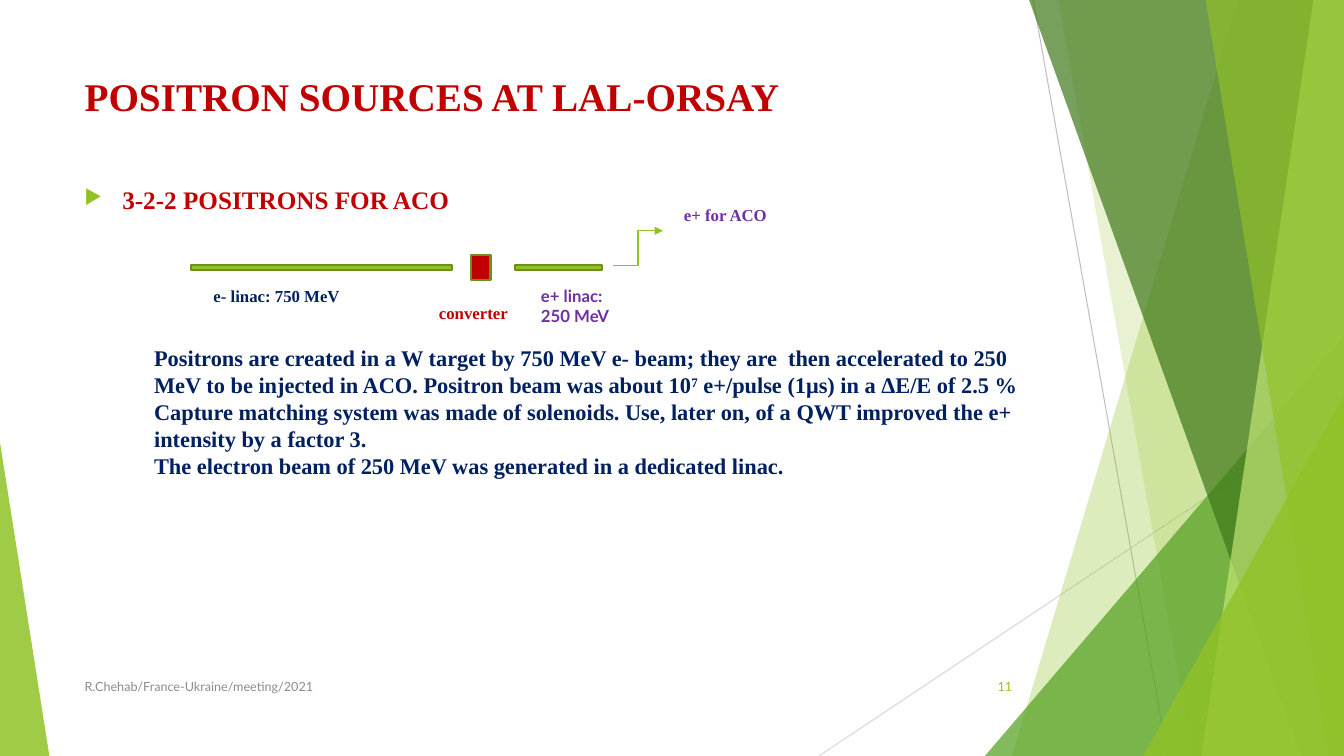
from lxml import etree
from pptx import Presentation, util as u
from pptx.dml.color import RGBColor
from pptx.enum import shapes, text
from pptx.oxml.ns import qn

WIDTH, HEIGHT = 960, 540
SERIF, SANS = "Times New Roman", "Lato"
GREEN, DARK_GREEN = "90C226", "6B901C"
RED, NAVY, PURPLE, GREY = "C00000", "002060", "7030A0", "8C8C8C"
LEFT_MARGIN = 53.3

# Thin lines: x1, y1, x2, y2, colour
THIN_LINES = [(738, 0, 834, HEIGHT, "BFBFBF"), (WIDTH, 290, 584.9, HEIGHT, "D9D9D9")]
# Bands run to the right edge: top x, bottom x, colour, opacity %
# Triangles stand on the bottom edge: left, top, width, apex position, colour, opacity %
FACETS = [
    ("band", 884.2, 722.9, GREEN, 30),
    ("band", 756, 851.8, GREEN, 20),
    ("triangle", 703.5, 240, 256.5, 1, "54A021", 72),
    ("band", 735.1, 929.5, "3F7819", 70),
    ("band", 938.2, 858.2, "C0E474", 70),
    ("band", 861.1, 949, GREEN, 65),
    ("triangle", 816.5, 283, 143.5, 1, GREEN, 80),
    ("triangle", 0, 316, 35.3, 0, GREEN, 85),
]

TITLE = "POSITRON SOURCES AT LAL-ORSAY"
TITLE_PLACE = (LEFT_MARGIN, 48, 676.8, 61.2)
HEADING = "3-2-2 POSITRONS FOR ACO"
HEADING_PLACE = (LEFT_MARGIN, 128.2, 676.8, 347)

# Beam line: left, width, height, fill
BEAM_AXIS = 191.1
BEAM_PARTS = [(136.4, 186.5, 3.6, GREEN), (336.2, 14.2, 18.2, RED), (367.9, 62.1, 3.6, GREEN)]
EXTRACTION = (437.8, 189.5, 473.5, 164.9)

# Text, place, size, font, colour
LABELS = [
    ("e- linac: 750 MeV", (145.4, 200.3, 141.8, 21.8), 12, SERIF, NAVY),
    ("converter", (306.4, 212.5, 72.7, 21.8), 12, SERIF, RED),
    ("e+ linac: 250 MeV", (379.3, 200.3, 65.5, 36), 12, SANS, PURPLE),
    ("e+ for ACO", (481.5, 142.7, 79.2, 21.8), 12, SERIF, PURPLE),
]
DESCRIPTION = [
    ["Positrons are created in a W target by 750 MeV e- beam; they are  then accelerated to 250 MeV "
     "to be injected in ACO. Positron beam was about 10", "7", " e+/pulse (1μs) in a ΔE/E of 2.5 %"],
    ["Capture matching system was made of solenoids. Use, later on, of a QWT improved the e+ "
     "intensity by a factor 3."],
    ["The electron beam of 250 MeV was generated in a dedicated linac."],
]
DESCRIPTION_PLACE = (103, 242.6, 635, 121)
FOOTER = ("R.Chehab/France-Ukraine/meeting/2021", (LEFT_MARGIN, 475.9, 496.1, 28.8), GREY)
NUMBER = ("11", (676, 475.9, 54, 28.8), GREEN)


def colour(value):
    return RGBColor.from_string(value)


def points(values):
    return [u.Pt(value) for value in values]


def paint(shape, fill, opacity=100, outline=None):
    shape.shadow.inherit = False
    shape.fill.solid()
    shape.fill.fore_color.rgb = colour(fill)
    if opacity < 100:
        tint = shape.fill._xPr.find(".//" + qn("a:srgbClr"))
        etree.SubElement(tint, qn("a:alpha"), val=str(opacity * 1000))
    if outline:
        shape.line.color.rgb = colour(outline)
        shape.line.width = u.Pt(1.5)
    else:
        shape.line.fill.background()


def add_line(slide, kind, ends, line_colour, width):
    line = slide.shapes.add_connector(kind, *points(ends))
    line.line.color.rgb = colour(line_colour)
    line.line.width = u.Pt(width)
    etree.SubElement(line._element.spPr, qn("a:effectLst"))
    return line


def add_facet(slide, kind, *values):
    *geometry, fill, opacity = values
    if kind == "band":
        top_x, bottom_x = geometry
        builder = slide.shapes.build_freeform(u.Pt(top_x), 0)
        corners = [(WIDTH, 0), (WIDTH, HEIGHT), (bottom_x, HEIGHT)]
        builder.add_line_segments([points(corner) for corner in corners])
        facet = builder.convert_to_shape()
    else:
        left, top, width, apex = geometry
        facet = slide.shapes.add_shape(shapes.MSO_SHAPE.ISOSCELES_TRIANGLE,
                                       *points((left, top, width, HEIGHT - top)))
        facet.adjustments[0] = apex
    paint(facet, fill, opacity)


def style(para, size, font, text_colour, bold=True):
    for span in para.runs:
        span.font.size = u.Pt(size)
        span.font.name = font
        span.font.bold = bold
        span.font.color.rgb = colour(text_colour)


def add_text(slide, words, place, size, font, text_colour, bold=True):
    box = slide.shapes.add_textbox(*points(place))
    box.text_frame.word_wrap = True
    box.text_frame.text = words
    style(box.text_frame.paragraphs[0], size, font, text_colour, bold)
    return box.text_frame


def add_bullet(para):
    props = para._p.get_or_add_pPr()
    props.set("marL", str(u.Pt(27)))
    props.set("indent", str(u.Pt(-27)))
    tint = etree.SubElement(props, qn("a:buClr"))
    etree.SubElement(tint, qn("a:srgbClr"), val=GREEN)
    etree.SubElement(props, qn("a:buSzPct"), val="80000")
    etree.SubElement(props, qn("a:buChar"), char="▶")


def add_title(slide):
    title = slide.shapes.title
    title.left, title.top, title.width, title.height = points(TITLE_PLACE)
    frame = title.text_frame
    frame.text = TITLE
    frame.auto_size = text.MSO_AUTO_SIZE.NONE
    frame.vertical_anchor = text.MSO_ANCHOR.TOP
    frame.paragraphs[0].alignment = text.PP_ALIGN.LEFT
    style(frame.paragraphs[0], 28, SERIF, RED)


def add_beam_line(slide):
    for left, width, height, fill in BEAM_PARTS:
        place = (left, BEAM_AXIS - height / 2, width, height)
        paint(slide.shapes.add_shape(shapes.MSO_SHAPE.RECTANGLE, *points(place)),
              fill, outline=DARK_GREEN)
    arrow = add_line(slide, shapes.MSO_CONNECTOR.ELBOW, EXTRACTION, GREEN, 1)
    etree.SubElement(arrow.line._get_or_add_ln(), qn("a:tailEnd"), type="triangle")


def add_description(slide):
    box = slide.shapes.add_textbox(*points(DESCRIPTION_PLACE))
    frame = box.text_frame
    frame.word_wrap = True
    for index, pieces in enumerate(DESCRIPTION):
        para = frame.add_paragraph() if index else frame.paragraphs[0]
        for piece in pieces:
            span = para.add_run()
            span.text = piece
            if piece == "7":
                span.font._element.set("baseline", "30000")
        style(para, 16, SERIF, NAVY)


def main():
    deck = Presentation()
    deck.slide_width, deck.slide_height = points((WIDTH, HEIGHT))
    slide = deck.slides.add_slide(deck.slide_layouts[5])
    for *ends, line_colour in THIN_LINES:
        add_line(slide, shapes.MSO_CONNECTOR.STRAIGHT, ends, line_colour, 0.75)
    for facet in FACETS:
        add_facet(slide, *facet)
    add_title(slide)
    heading = add_text(slide, HEADING, HEADING_PLACE, 18, SERIF, RED).paragraphs[0]
    heading.space_before = u.Pt(10)
    add_bullet(heading)
    for words, place, text_colour in (FOOTER, NUMBER):
        frame = add_text(slide, words, place, 9, SANS, text_colour, bold=False)
        frame.vertical_anchor = text.MSO_ANCHOR.MIDDLE
        if words == NUMBER[0]:
            frame.paragraphs[0].alignment = text.PP_ALIGN.RIGHT
    add_beam_line(slide)
    for label in LABELS:
        add_text(slide, *label)
    add_description(slide)
    deck.save("out.pptx")


if __name__ == "__main__":
    main()
